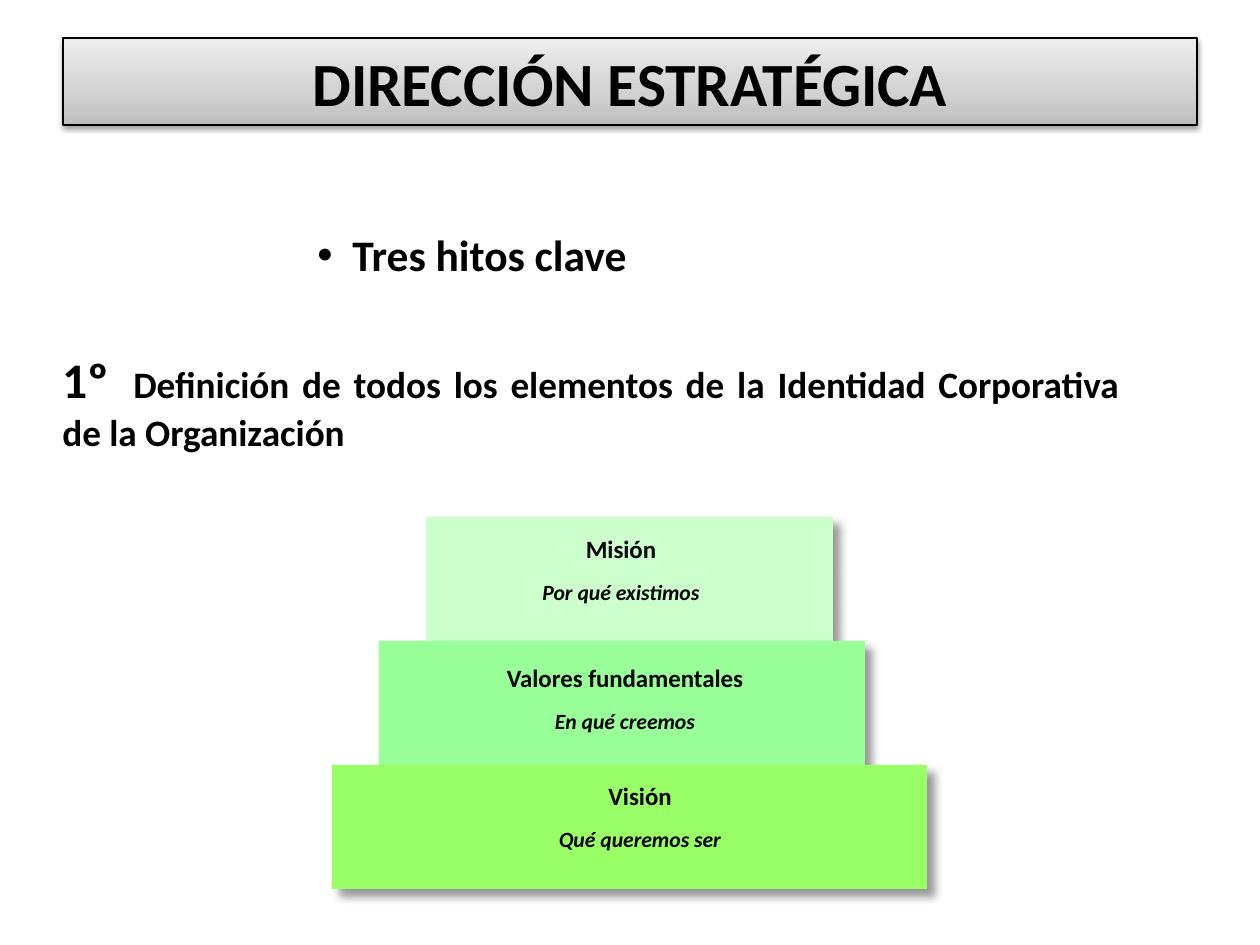
"""Builds the slide on strategic direction with its three-step pyramid."""
import copy
from dataclasses import dataclass

import pptx
import pptx.dml.color
import pptx.enum.shapes
import pptx.enum.text
import pptx.oxml
import pptx.oxml.ns
import pptx.util

SCALE = 914400 / 126
ALIGN = pptx.enum.text.PP_ALIGN


@dataclass(frozen=True)
class Theme:
    font: str = "Calibri"
    ink: str = "000000"
    shade: str = "777777"
    blend: tuple = ((0, "BDBDBD"), (0.35, "D1D1D1"), (1, "EEEEEE"))
    title: float = 35.1
    point: float = 24.9
    mark: float = 28.4
    body: float = 21.3
    name: float = 14.2
    note: float = 12.4


@dataclass(frozen=True)
class Shadow:
    color: str
    alpha: int
    blur: float
    dist: float
    angle: int


@dataclass(frozen=True)
class Step:
    name: str
    note: str
    fill: str
    left: int
    width: int
    mid: int
    top: int


THEME = Theme()
SOFT = Shadow(THEME.shade, 75, 5, 5.7, 45)
DROP = Shadow(THEME.ink, 38, 3.1, 1.6, 90)
FIRST, HIGH, LABEL = 517, 124, 300
STEPS = (
    Step("Misión", "Por qué existimos", "CCFFCC", 426, 407, 621, 534),
    Step("Valores fundamentales", "En qué creemos", "99FF99", 379, 486, 625, 663),
    Step("Visión", "Qué queremos ser", "99FF66", 332, 595, 640, 781),
)


def px(size: int) -> int:
    return round(size * SCALE)


def rgb(code: str):
    return pptx.dml.color.RGBColor.from_string(code)


def style(run, size: float, slant: bool = False) -> None:
    font = run.font
    font.name, font.size, font.bold = THEME.font, pptx.util.Pt(size), True
    font.italic = slant or None
    font.color.rgb = rgb(THEME.ink)


def cast(shape, shadow: Shadow) -> None:
    shape.shadow.inherit = False
    node = shape._element.spPr.find(pptx.oxml.ns.qn("a:effectLst"))
    node.append(pptx.oxml.parse_xml(
        f'<a:outerShdw {pptx.oxml.ns.nsdecls("a")} blurRad="{pptx.util.Pt(shadow.blur)}"'
        f' dist="{pptx.util.Pt(shadow.dist)}" dir="{shadow.angle * 60000}"'
        f' algn="ctr" rotWithShape="0"><a:srgbClr val="{shadow.color}">'
        f'<a:alpha val="{shadow.alpha * 1000}"/></a:srgbClr></a:outerShdw>'))


def block(slide, left: int, top: int, width: int, height: int, shadow: Shadow):
    kind = pptx.enum.shapes.MSO_SHAPE.RECTANGLE
    shape = slide.shapes.add_shape(kind, px(left), px(top), px(width), px(height))
    cast(shape, shadow)
    return shape


def write(slide, left: int, top: int, width: int, height: int, text: str):
    frame = slide.shapes.add_textbox(px(left), px(top), px(width), px(height)).text_frame
    frame.word_wrap = True
    frame.text = text
    return frame


def blend(shape) -> None:
    shape.fill.gradient()
    shape.fill.gradient_angle = 90
    last = shape._element.spPr.findall(".//" + pptx.oxml.ns.qn("a:gs"))[-1]
    last.addnext(copy.deepcopy(last))
    for stop, (place, code) in zip(shape.fill.gradient_stops, THEME.blend):
        stop.position = place
        stop.color.rgb = rgb(code)


def head(slide) -> None:
    shape = block(slide, 63, 38, 1134, 87, DROP)
    blend(shape)
    shape.line.color.rgb = rgb(THEME.ink)
    shape.line.width = pptx.util.Pt(0.75)
    frame = shape.text_frame
    frame.text = "DIRECCIÓN ESTRATÉGICA"
    frame.vertical_anchor = pptx.enum.text.MSO_ANCHOR.MIDDLE
    frame.paragraphs[0].alignment = ALIGN.CENTER
    style(frame.paragraphs[0].runs[0], THEME.title)


def point(slide) -> None:
    para = write(slide, 305, 222, 411, 66, "Tres hitos clave").paragraphs[0]
    props = para._p.get_or_add_pPr()
    props.set("marL", str(px(35)))
    props.set("indent", str(-px(35)))
    spaces = pptx.oxml.ns.nsdecls("a")
    props.append(pptx.oxml.parse_xml(f'<a:buFont {spaces} typeface="Arial"/>'))
    props.append(pptx.oxml.parse_xml(f'<a:buChar {spaces} char="•"/>'))
    style(para.runs[0], THEME.point)


def goal(slide) -> None:
    para = write(slide, 50, 343, 1082, 118, "1º").paragraphs[0]
    para.alignment = ALIGN.JUSTIFY
    para._p.get_or_add_pPr().append(pptx.oxml.parse_xml(
        f'<a:tabLst {pptx.oxml.ns.nsdecls("a")}><a:tab pos="{px(71)}" algn="l"/></a:tabLst>'))
    style(para.runs[0], THEME.mark)
    run = para.add_run()
    run.text = "\tDefinición de todos los elementos de la Identidad Corporativa de la Organización"
    style(run, THEME.body)


def label(slide, step: Step) -> None:
    frame = write(slide, step.mid - LABEL // 2, step.top, LABEL, 78,
                  f"{step.name}\n{step.note}")
    name, note = frame.paragraphs
    for para in (name, note):
        para.alignment = ALIGN.CENTER
        para.line_spacing = 0.75
    note.space_before = pptx.util.Pt(13)
    style(name.runs[0], THEME.name)
    style(note.runs[0], THEME.note, True)


def main() -> None:
    deck = pptx.Presentation()
    deck.slide_width, deck.slide_height = px(1260), px(945)
    slide = deck.slides.add_slide(deck.slide_layouts[6])
    goal(slide)
    for row, step in enumerate(STEPS):
        shape = block(slide, step.left, FIRST + row * HIGH, step.width, HIGH, SOFT)
        shape.fill.solid()
        shape.fill.fore_color.rgb = rgb(step.fill)
        shape.line.fill.background()
    for step in STEPS:
        label(slide, step)
    point(slide)
    head(slide)
    deck.save("out.pptx")


if __name__ == "__main__":
    main()
